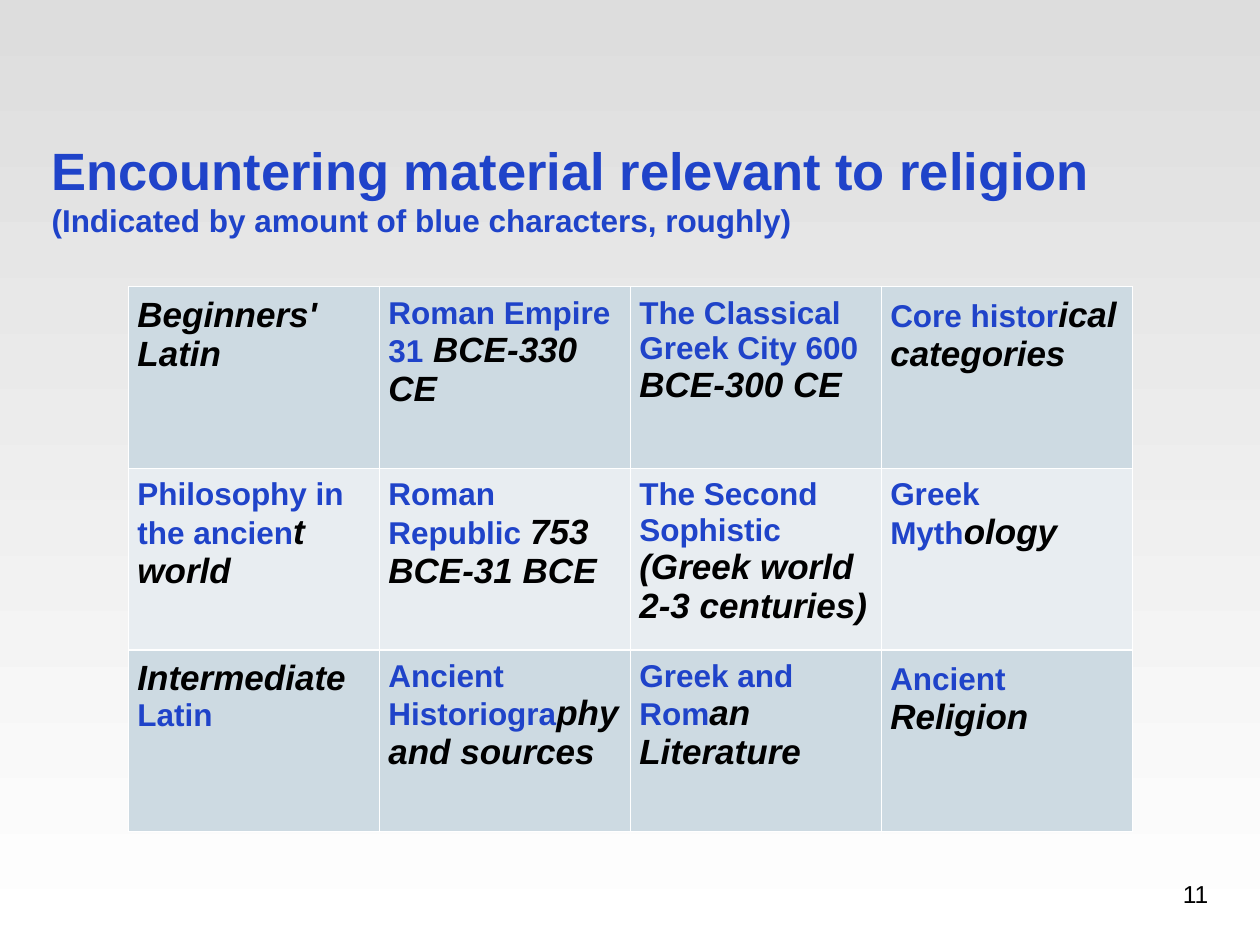
from dataclasses import dataclass

from lxml import etree
from pptx import Presentation
from pptx.dml.color import RGBColor
from pptx.enum.text import MSO_ANCHOR, MSO_AUTO_SIZE, PP_ALIGN
from pptx.oxml.ns import qn
from pptx.util import Cm, Pt

TOP = MSO_ANCHOR.TOP
NO_FIT = MSO_AUTO_SIZE.NONE
LEFT, RIGHT = PP_ALIGN.LEFT, PP_ALIGN.RIGHT
TITLE_ONLY = 5


@dataclass(frozen=True)
class Theme:
    font: str = "Arial"
    blue: str = "1F43C9"
    black: str = "000000"
    white: str = "FFFFFF"
    backdrop: str = "DDDDDD"
    bands: tuple = ("CDDAE2", "E8EDF1")
    title_size: int = 30
    subtitle_size: int = 18
    relevant_size: int = 18
    other_size: int = 20
    number_size: int = 14
    border_width: int = 1


def relevant(text):
    """Mark words that touch on religion: blue and upright."""
    return text, True


def other(text):
    """Mark the remaining words: black and italic."""
    return text, False


COURSES = [
    [
        [other("Beginners' Latin")],
        [relevant("Roman Empire 31"), other(" BCE-330 CE")],
        [relevant("The Classical Greek City 600 "), other("BCE-300 CE")],
        [relevant("Core histor"), other("ical categories")],
    ],
    [
        [relevant("Philosophy in the ancien"), other("t world")],
        [relevant("Roman Republic "), other("753 BCE-31 BCE")],
        [relevant("The Second Sophistic "), other("(Greek world 2-3 centuries)")],
        [relevant("Greek Myth"), other("ology")],
    ],
    [
        [other("Intermediate "), relevant("Latin")],
        [relevant("Ancient Historiogra"), other("phy and sources")],
        [relevant("Greek and Rom"), other("an Literature")],
        [relevant("Ancient"), other(" Religion")],
    ],
]


class SlideBuilder:
    def __init__(self, deck, theme):
        self.theme = theme
        self.page = deck.slides.add_slide(deck.slide_layouts[TITLE_ONLY])

    def format_font(self, font, size, color, bold=False, italic=False):
        font.name = self.theme.font
        font.size = Pt(size)
        font.bold = bold
        font.italic = italic
        font.color.rgb = RGBColor.from_string(color)

    def set_margins(self, holder, margin):
        holder.margin_left = holder.margin_right = Cm(margin)
        holder.margin_top = holder.margin_bottom = Cm(margin)

    def background(self):
        fill = self.page.background.fill
        fill.gradient()
        fill.gradient_angle = 90
        for stop, color in zip(fill.gradient_stops, (self.theme.white, self.theme.backdrop)):
            stop.color.rgb = RGBColor.from_string(color)

    def title(self, lines, left, top, width, height):
        """Fill the title placeholder with (text, size) lines."""
        box = self.page.shapes.title
        box.left, box.top, box.width, box.height = Cm(left), Cm(top), Cm(width), Cm(height)
        frame = box.text_frame
        frame.word_wrap = True
        frame.auto_size = NO_FIT
        frame.vertical_anchor = TOP
        self.set_margins(frame, 0.13)
        frame.margin_top = Cm(0.28)
        frame.text = "\n".join(text for text, _ in lines)
        for para, (_, size) in zip(frame.paragraphs, lines):
            para.alignment = LEFT
            for span in para.runs:
                self.format_font(span.font, size, self.theme.blue, bold=True)

    def page_number(self, number, left, top, width, height):
        box = self.page.shapes.add_textbox(Cm(left), Cm(top), Cm(width), Cm(height))
        frame = box.text_frame
        frame.word_wrap = True
        self.set_margins(frame, 0.13)
        frame.text = str(number)
        para = frame.paragraphs[0]
        para.alignment = RIGHT
        self.format_font(para.runs[0].font, self.theme.number_size, self.theme.black)

    def border(self, cell):
        """Draw all four cell edges; they must precede the fill in the XML."""
        properties = cell._tc.get_or_add_tcPr()
        for position, edge in enumerate(("a:lnL", "a:lnR", "a:lnT", "a:lnB")):
            line = etree.Element(qn(edge), w=str(Pt(self.theme.border_width)))
            solid = etree.SubElement(line, qn("a:solidFill"))
            etree.SubElement(solid, qn("a:srgbClr"), val=self.theme.white)
            properties.insert(position, line)

    def cell(self, cell, spans, band):
        theme = self.theme
        cell.fill.solid()
        cell.fill.fore_color.rgb = RGBColor.from_string(band)
        self.border(cell)
        self.set_margins(cell, 0.18)
        cell.vertical_anchor = TOP
        para = cell.text_frame.paragraphs[0]
        for text, is_relevant in spans:
            span = para.add_run()
            span.text = text
            size = theme.relevant_size if is_relevant else theme.other_size
            color = theme.blue if is_relevant else theme.black
            self.format_font(span.font, size, color, bold=True, italic=not is_relevant)

    def table(self, rows, left, top, column_width, row_height):
        row_count, column_count = len(rows), len(rows[0])
        frame = self.page.shapes.add_table(
            row_count, column_count, Cm(left), Cm(top),
            Cm(column_width * column_count), Cm(row_height * row_count))
        grid = frame.table
        grid.first_row = False
        grid.horz_banding = False
        for column in grid.columns:
            column.width = Cm(column_width)
        for index, contents in enumerate(rows):
            grid.rows[index].height = Cm(row_height)
            band = self.theme.bands[index % len(self.theme.bands)]
            for cell, spans in zip(grid.rows[index].cells, contents):
                self.cell(cell, spans, band)


def main():
    theme = Theme()
    deck = Presentation()
    deck.slide_width, deck.slide_height = Cm(25.4), Cm(19.05)
    builder = SlideBuilder(deck, theme)
    builder.background()
    builder.page_number(11, 21.69, 17.6, 2.8, 0.82)
    builder.title(
        [("Encountering material relevant to religion", theme.title_size),
         ("(Indicated by amount of blue characters, roughly)", theme.subtitle_size)],
        0.91, 2.51, 23.57, 5)
    builder.table(COURSES, 2.59, 5.78, 5.06, 3.66)
    deck.save("out.pptx")


if __name__ == "__main__":
    main()
